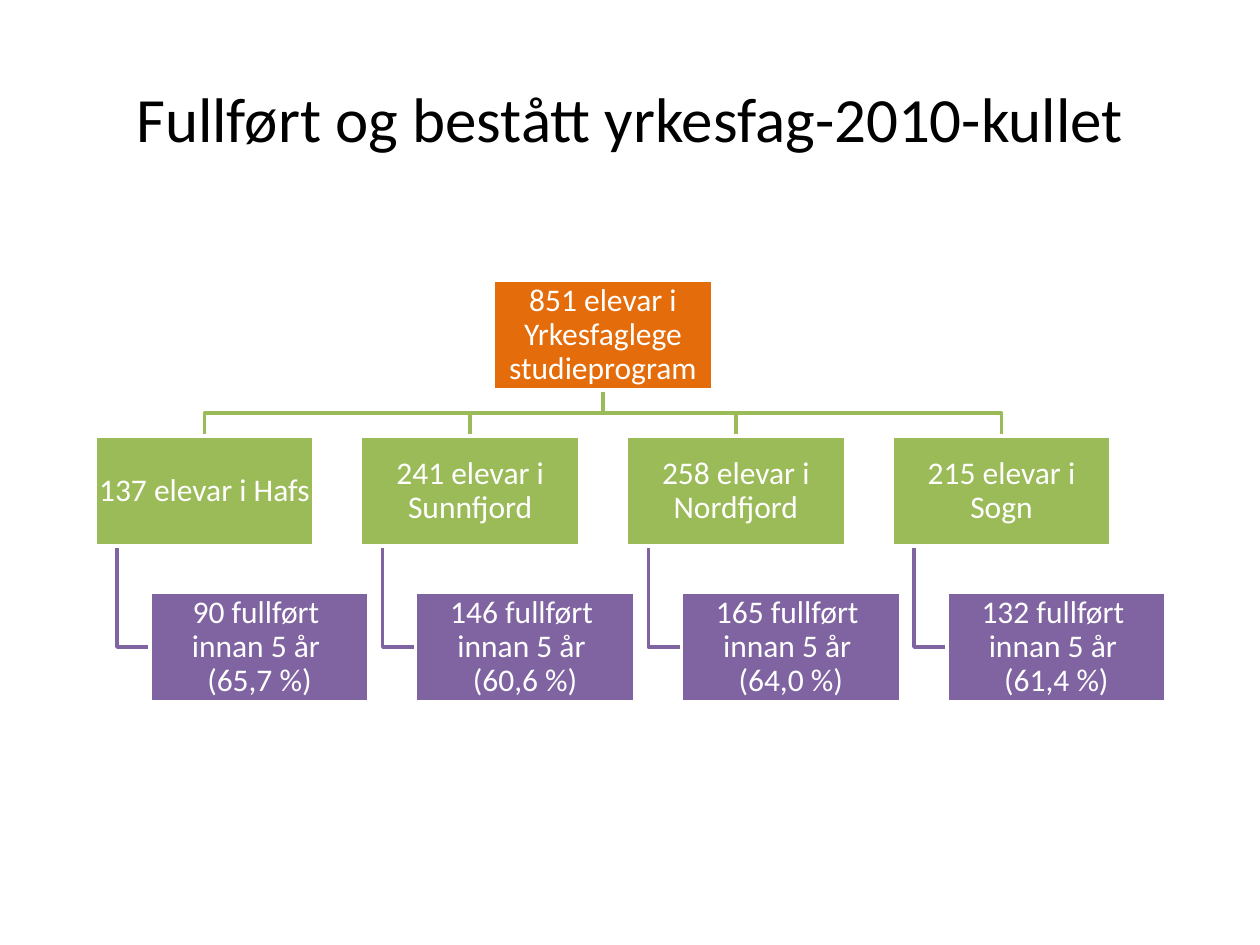
from pptx import Presentation
from pptx.dml.color import RGBColor as Rgb
from pptx.enum.shapes import MSO_SHAPE as Shape
from pptx.enum.text import MSO_ANCHOR as Anchor, PP_ALIGN as Align
from pptx.util import Pt

PX = 914400 / 126  # EMU in one px
COLORS = {"text": "000000", "white": "FFFFFF", "root": "E46C0A",
          "region": "9BBB59", "result": "8064A2"}
REGIONS = [
    ("137 elevar i Hafs", "90 fullført \ninnan 5 år \n(65,7 %)"),
    ("241 elevar i Sunnfjord", "146 fullført \ninnan 5 år \n(60,6 %)"),
    ("258 elevar i Nordfjord", "165 fullført \ninnan 5 år \n(64,0 %)"),
    ("215 elevar i Sogn", "132 fullført \ninnan 5 år \n(61,4 %)"),
]


def emu(px):
    return round(px * PX)


def color(name):
    return Rgb.from_string(COLORS[name])


def write(shape, text, size=18, ink="white", spacing=None, inset=None):
    frame = shape.text_frame
    frame.word_wrap = True
    frame.vertical_anchor = Anchor.MIDDLE
    if inset is not None:
        frame.margin_left = frame.margin_right = emu(inset)
        frame.margin_top = frame.margin_bottom = emu(inset)
    para = frame.paragraphs[0]
    para.text = text
    para.alignment = Align.CENTER
    if spacing:
        para.line_spacing = spacing
    for span in para.runs:
        span.font.name = "Calibri"
        span.font.size = Pt(size)
        span.font.color.rgb = color(ink)


def add_title(page, text, left, top, width, height):
    title = page.shapes.title
    title.left, title.top = emu(left), emu(top)
    title.width, title.height = emu(width), emu(height)
    write(title, text, size=36, ink="text")


def add_card(page, text, fill, left, top, width, height):
    card = page.shapes.add_shape(Shape.RECTANGLE, emu(left), emu(top),
                                 emu(width), emu(height))
    card.shadow.inherit = False
    card.fill.solid()
    card.fill.fore_color.rgb = color(fill)
    card.line.color.rgb = color("white")
    card.line.width = Pt(2)
    write(card, text, spacing=0.9, inset=1)


def add_elbow(page, points, ink):
    start, *rest = [(emu(x), emu(y)) for x, y in points]
    builder = page.shapes.build_freeform(*start)
    builder.add_line_segments(rest, close=False)
    elbow = builder.convert_to_shape()
    elbow.shadow.inherit = False
    elbow.fill.background()
    elbow.line.color.rgb = color(ink)
    elbow.line.width = Pt(2)


def add_hierarchy(page, root, regions, left, top, width, height):
    card_w, card_h, indent, stem = 219, 110, 55, 22
    column_step = (width - card_w - indent) / (len(regions) - 1)
    row_step = (height - card_h) / 2
    region_top, result_top = top + row_step, top + 2 * row_step
    center = left + (width - indent) / 2
    root_bottom = top + card_h
    bus = (root_bottom + region_top) / 2
    columns = [left + i * column_step for i in range(len(regions))]

    # Connecting lines lie behind the cards
    for x in reversed(columns):
        middle = result_top + card_h / 2
        add_elbow(page, [(x + stem, region_top + card_h), (x + stem, middle),
                         (x + indent, middle)], "result")
        target = x + card_w / 2
        add_elbow(page, [(center, root_bottom), (center, bus), (target, bus),
                         (target, region_top)], "region")

    # Root card, then each region with its result
    add_card(page, root, "root", center - card_w / 2, top, card_w, card_h)
    for x, (region, result) in zip(columns, regions):
        add_card(page, region, "region", x, region_top, card_w, card_h)
        add_card(page, result, "result", x + indent, result_top, card_w, card_h)


def main():
    deck = Presentation()
    deck.slide_width, deck.slide_height = emu(1260), emu(945)
    page = deck.slides.add_slide(deck.slide_layouts[5])
    add_title(page, "Fullført og bestått yrkesfag-2010-kullet", 63, 38, 1134, 158)
    add_hierarchy(page, "851 elevar i Yrkesfaglege studieprogram", REGIONS,
                  95, 280, 1071, 422)
    deck.save("out.pptx")


if __name__ == "__main__":
    main()
